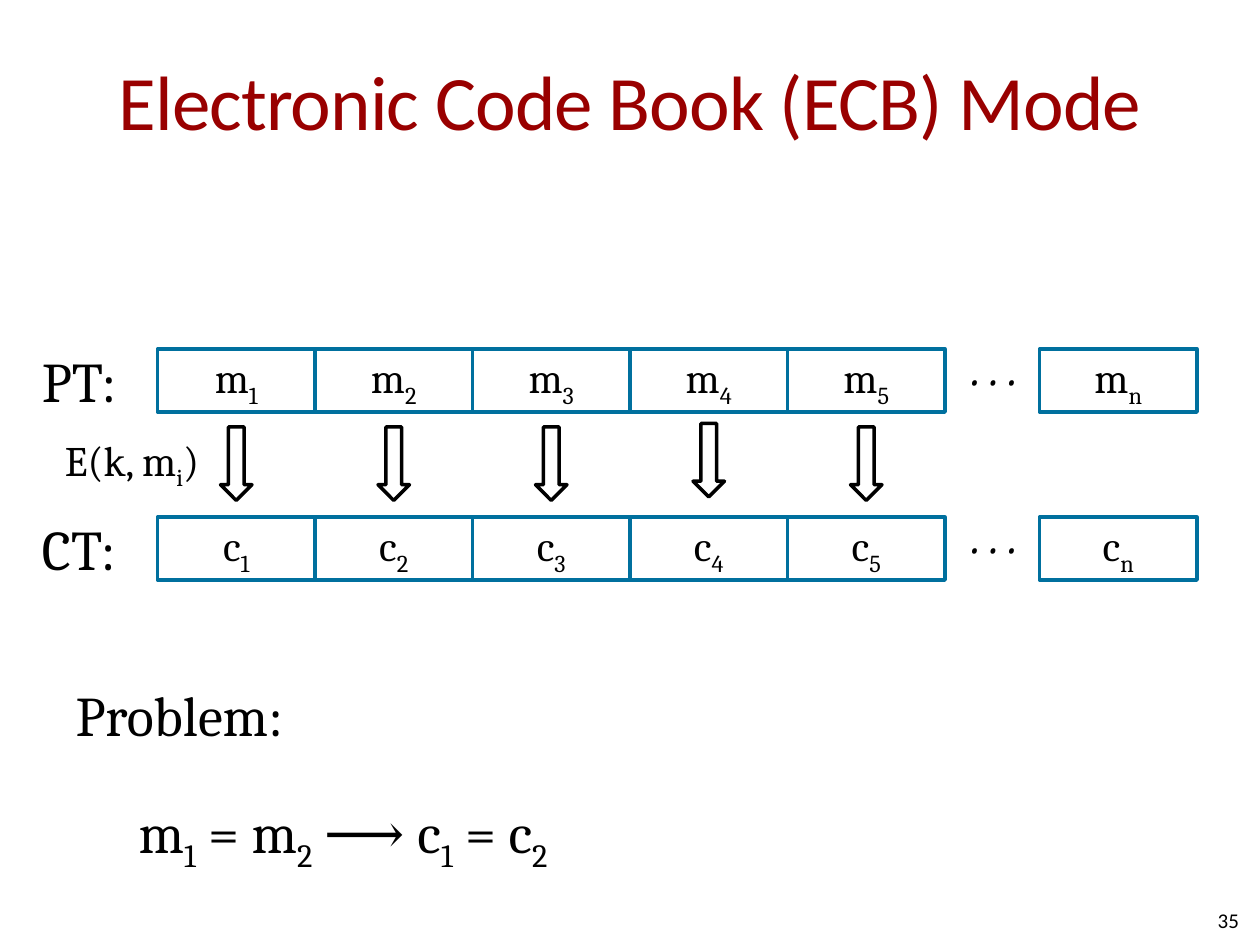
from dataclasses import dataclass

from pptx import Presentation
from pptx.dml.color import RGBColor
from pptx.enum.shapes import MSO_SHAPE
from pptx.enum.text import MSO_ANCHOR, MSO_AUTO_SIZE, PP_ALIGN
from pptx.util import Pt

RECTANGLE, DOWN_ARROW = MSO_SHAPE.RECTANGLE, MSO_SHAPE.DOWN_ARROW
TOP, MIDDLE = MSO_ANCHOR.TOP, MSO_ANCHOR.MIDDLE
LEFT, CENTER, RIGHT = PP_ALIGN.LEFT, PP_ALIGN.CENTER, PP_ALIGN.RIGHT
NO_AUTOSIZE, FIT_SHAPE = MSO_AUTO_SIZE.NONE, MSO_AUTO_SIZE.SHAPE_TO_FIT_TEXT


@dataclass(frozen=True)
class Theme:
    ink: RGBColor = RGBColor(0, 0, 0)
    paper: RGBColor = RGBColor(255, 255, 255)
    heading: RGBColor = RGBColor(0x99, 0, 0)
    border: RGBColor = RGBColor(0, 0x70, 0x9E)
    sans: str = "Calibri"
    serif: str = "Cambria"
    title_size: int = 44
    large: int = 32
    block_size: int = 24
    dots_size: int = 16
    number_size: int = 12
    line: int = 2


THEME = Theme()
BLOCK_LEFT, BLOCK_WIDTH, BLOCK_HEIGHT = 90, 90, 36
BLOCK_COUNT, LAST_BLOCK_LEFT = 5, 594
PLAIN_TOP, CIPHER_TOP = 199.5, 295.5
ARROW_TOP, ARROW_WIDTH, ARROW_HEIGHT = 244, 18, 42
FOURTH_ARROW_LIFT = 2


def place(shape, left, top, width, height):
    shape.left, shape.top = Pt(left), Pt(top)
    shape.width, shape.height = Pt(width), Pt(height)


def set_frame(shape, anchor=TOP, insets=(0, 0, 0, 0), wrap=True,
              auto_size=NO_AUTOSIZE):
    frame = shape.text_frame
    frame.word_wrap, frame.auto_size = wrap, auto_size
    frame.vertical_anchor = anchor
    (frame.margin_left, frame.margin_top,
     frame.margin_right, frame.margin_bottom) = map(Pt, insets)
    return frame.paragraphs[0]


def write(paragraph, parts, size, font=THEME.serif, color=THEME.ink,
          align=LEFT, italic=None):
    """Add runs; every second part is a subscript."""
    paragraph.alignment = align
    for index, part in enumerate(parts):
        run = paragraph.add_run()
        run.text = part
        run.font.size, run.font.name = Pt(size), font
        run.font.color.rgb, run.font.italic = color, italic
        if index % 2:
            run.font._element.set("baseline", "-25000")


def add_filled(shapes, kind, left, top, width, height, line=None):
    shape = shapes.add_shape(kind, Pt(left), Pt(top), Pt(width), Pt(height))
    shape.shadow.inherit = False
    shape.fill.solid()
    shape.fill.fore_color.rgb = THEME.paper
    if line is None:
        shape.line.fill.background()
    else:
        shape.line.color.rgb = line
        shape.line.width = Pt(THEME.line)
    return shape


def add_block(shapes, left, top, letter, index):
    block = add_filled(shapes, RECTANGLE, left, top, BLOCK_WIDTH,
                       BLOCK_HEIGHT, THEME.border)
    write(set_frame(block, MIDDLE), (letter, index), THEME.block_size,
          align=CENTER)


def add_label(shapes, left, top, width, height, text, size, **style):
    label = add_filled(shapes, RECTANGLE, left, top, width, height)
    paragraph = set_frame(label, wrap=False, auto_size=FIT_SHAPE)
    write(paragraph, (text,), size, **style)


def add_row(shapes, top, name, letter):
    """Add a label, the joined blocks, the dots and the last block."""
    blocks = shapes.add_group_shape().shapes
    for i in range(BLOCK_COUNT):
        add_block(blocks, BLOCK_LEFT + i * BLOCK_WIDTH, top, letter, str(i + 1))
    add_block(shapes, LAST_BLOCK_LEFT, top, letter, "n")
    add_label(shapes, 24, top - 1.5, 45, 39, name, THEME.large)
    add_label(shapes, 553, top + 8, 29, 19.5, "• • •", THEME.dots_size,
              align=CENTER, italic=True)


def add_arrows(shapes):
    for i in range(BLOCK_COUNT):
        left = BLOCK_LEFT + i * BLOCK_WIDTH + (BLOCK_WIDTH - ARROW_WIDTH) / 2
        top = ARROW_TOP - (FOURTH_ARROW_LIFT if i == 3 else 0)
        add_filled(shapes, DOWN_ARROW, left, top, ARROW_WIDTH, ARROW_HEIGHT,
                   THEME.ink)


def add_text(shapes, box, parts, size, insets=(0, 0, 0, 0), wrap=True, **style):
    text_box = shapes.add_textbox(*map(Pt, box))
    write(set_frame(text_box, MIDDLE, insets, wrap), parts, size, **style)


def fill_title(title):
    place(title, 36, 12, 648, 90)
    paragraph = set_frame(title, MIDDLE, (0, 3.6, 0, 3.6))
    write(paragraph, ("Electronic Code Book (ECB) Mode",), THEME.title_size,
          THEME.sans, THEME.heading, CENTER)
    paragraph.runs[0].font._element.set("spc", "-50")


def fill_problem(body):
    place(body, 36, 366, 648, 156)
    heading = set_frame(body, insets=(7.2, 3.6, 7.2, 3.6))
    equation = body.text_frame.add_paragraph()
    lines = (
        (heading, 0, ("Problem:",)),
        (equation, 36, ("m", "1", " = m", "2", " ⟶ c", "1", " = c", "2")),
    )
    for paragraph, indent, parts in lines:
        write(paragraph, parts, THEME.large)
        paragraph.line_spacing = 1.5
        paragraph.space_before = Pt(6.4)
        properties = paragraph._p.get_or_add_pPr()
        properties.set("marL", str(Pt(indent)))
        properties.set("indent", "0")
        bullet = properties.makeelement(
            "{http://schemas.openxmlformats.org/drawingml/2006/main}buNone", {})
        properties.append(bullet)


def main():
    deck = Presentation()
    deck.slide_width, deck.slide_height = Pt(720), Pt(540)
    slide = deck.slides.add_slide(deck.slide_layouts[1])
    shapes = slide.shapes

    fill_title(shapes.title)
    fill_problem(slide.placeholders[1])
    add_row(shapes, PLAIN_TOP, "PT:", "m")
    add_row(shapes, CIPHER_TOP, "CT:", "c")
    add_arrows(shapes)
    add_text(shapes, (30, 241, 99, 47), ("E(k, m", "i", ")"),
             THEME.block_size, (7.2, 3.6, 7.2, 3.6), wrap=False)
    add_text(shapes, (540, 511, 168, 29), ("35",), THEME.number_size,
             font=THEME.sans, align=RIGHT)
    deck.save("out.pptx")


if __name__ == "__main__":
    main()
